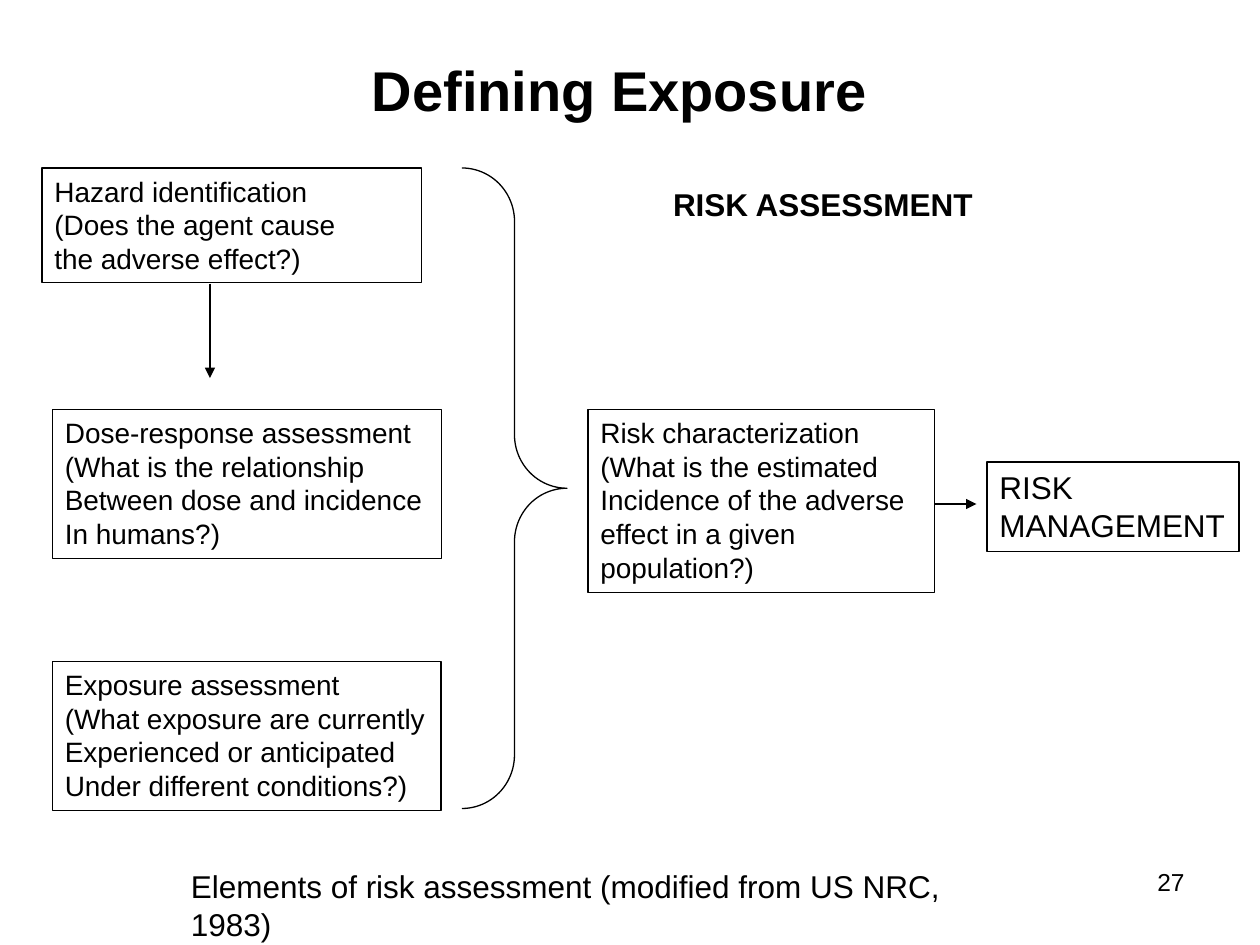
from lxml import etree
from pptx import Presentation
from pptx.dml.color import RGBColor
from pptx.enum.shapes import MSO_CONNECTOR, MSO_SHAPE
from pptx.enum.text import MSO_ANCHOR, PP_ALIGN
from pptx.oxml.ns import qn
from pptx.util import Pt

LEFT, CENTER, RIGHT = PP_ALIGN.LEFT, PP_ALIGN.CENTER, PP_ALIGN.RIGHT
TOP, MIDDLE = MSO_ANCHOR.TOP, MSO_ANCHOR.MIDDLE
THEME = {
    "font": "Arial",
    "ink": RGBColor(0, 0, 0),
    "title": Pt(32),
    "label": Pt(18),
    "step": Pt(16),
    "number": Pt(14),
    "line": Pt(0.75),
}


def write(shape, text, size, bold=False, align=LEFT, anchor=TOP, wrap=True):
    frame = shape.text_frame
    frame.text = text
    frame.word_wrap = wrap
    frame.vertical_anchor = anchor
    for paragraph in frame.paragraphs:
        paragraph.alignment = align
        paragraph.font.name = THEME["font"]
        paragraph.font.size = THEME[size]
        paragraph.font.bold = bold
        paragraph.font.color.rgb = THEME["ink"]


def add_outline(preset, left, top, width, height):
    shape = slide.shapes.add_shape(preset, Pt(left), Pt(top), Pt(width), Pt(height))
    shape.shadow.inherit = False
    shape.fill.background()
    shape.line.color.rgb = THEME["ink"]
    shape.line.width = THEME["line"]
    return shape


deck = Presentation()
deck.slide_width, deck.slide_height = Pt(720), Pt(540)
slide = deck.slides.add_slide(deck.slide_layouts[5])

# Title
title = slide.shapes.title
title.left, title.top, title.width, title.height = Pt(102), Pt(12), Pt(504), Pt(78)
write(title, "Defining Exposure", "title", bold=True, align=CENTER, anchor=MIDDLE)

# Boxes of the process: left, top, width, height, size, wrap, text
steps = [
    (24, 96, 217, 65.5, "step", True,
     "Hazard identification\n(Does the agent cause\nthe adverse effect?)"),
    (30, 234, 222.5, 85, "step", True,
     "Dose-response assessment\n(What is the relationship\n"
     "Between dose and incidence\nIn humans?)"),
    (30, 378, 222, 85, "step", False,
     "Exposure assessment\n(What exposure are currently\n"
     "Experienced or anticipated\nUnder different conditions?)"),
    (336, 234, 198, 104.4, "step", True,
     "Risk characterization\n(What is the estimated\n"
     "Incidence of the adverse\neffect in a given population?)"),
    (564, 264, 144, 51, "label", False, "RISK\nMANAGEMENT"),
]
for left, top, width, height, size, wrap, text in steps:
    step = add_outline(MSO_SHAPE.RECTANGLE, left, top, width, height)
    write(step, text, size, wrap=wrap)

# Brace that gathers the three assessments
brace = add_outline(MSO_SHAPE.RIGHT_BRACE, 264, 96, 60, 366)
brace.adjustments[0] = 0.51
brace.adjustments[1] = 0.5

# Arrows between the steps
for start_x, start_y, end_x, end_y in [(120, 162, 120, 216), (534, 288, 558, 288)]:
    arrow = slide.shapes.add_connector(
        MSO_CONNECTOR.STRAIGHT, Pt(start_x), Pt(start_y), Pt(end_x), Pt(end_y))
    arrow.line.color.rgb = THEME["ink"]
    arrow.line.width = THEME["line"]
    etree.SubElement(arrow.line._get_or_add_ln(), qn("a:tailEnd"), type="triangle")
    etree.SubElement(arrow._element.spPr, qn("a:effectLst"))

# Heading, source line and page number
labels = [
    (377, 102, 186.5, 29, "RISK ASSESSMENT",
     {"size": "label", "bold": True, "align": CENTER, "wrap": False}),
    (102, 492, 493, 29, "Elements of risk assessment (modified from US NRC, 1983)",
     {"size": "label", "wrap": False}),
    (516, 492, 168, 37.5, "27", {"size": "number", "align": RIGHT}),
]
for left, top, width, height, text, style in labels:
    label = slide.shapes.add_textbox(Pt(left), Pt(top), Pt(width), Pt(height))
    write(label, text, **style)

deck.save("out.pptx")
